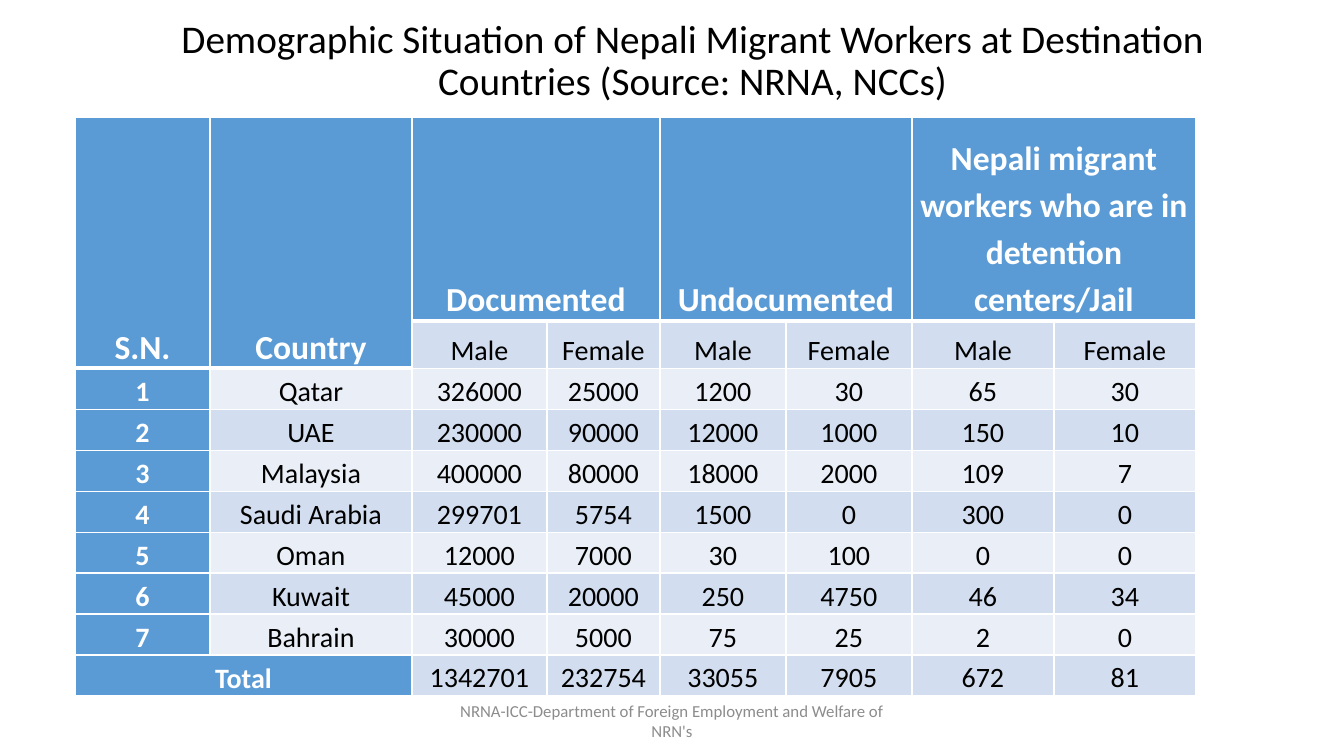
"""Build a slide with a table of Nepali migrant workers by destination country."""
import lxml.etree
import pptx
import pptx.dml.color
import pptx.enum.text
import pptx.oxml.ns
import pptx.util

TITLE = "Demographic Situation of Nepali Migrant Workers at Destination Countries (Source: NRNA, NCCs)"
FOOTER = "NRNA-ICC-Department of Foreign Employment and Welfare of NRN's"
KEYS = ["S.N.", "Country"]
GROUPS = ["Documented", "Undocumented", "Nepali migrant workers who are in detention centers/Jail"]
SEXES = ["Male", "Female"]
COUNTRIES = [
    ("Qatar", 326000, 25000, 1200, 30, 65, 30),
    ("UAE", 230000, 90000, 12000, 1000, 150, 10),
    ("Malaysia", 400000, 80000, 18000, 2000, 109, 7),
    ("Saudi Arabia", 299701, 5754, 1500, 0, 300, 0),
    ("Oman", 12000, 7000, 30, 100, 0, 0),
    ("Kuwait", 45000, 20000, 250, 4750, 46, 34),
    ("Bahrain", 30000, 5000, 75, 25, 2, 0),
]
TOTALS = (1342701, 232754, 33055, 7905, 672, 81)

SLIDE = (1344, 756)
TITLE_BOX = (113, -11, 1159, 146)
FOOTER_BOX = (445, 701, 454, 40)
TABLE_AT = (75, 117)
COLUMNS = [135, 202, 135, 113, 126, 126, 142, 142]
ROWS = [204, 46] + [41] * (len(COUNTRIES) + 1)
CELL_INSET = 7

FONT = "Calibri"
BLACK, WHITE, GRAY = "000000", "FFFFFF", "8C8C8C"
BLUE, BANDS = "5B9BD5", ("EAEFF7", "D2DEEF")
MIDDLE = pptx.enum.text.MSO_ANCHOR.MIDDLE
BOTTOM = pptx.enum.text.MSO_ANCHOR.BOTTOM


def px(length):
    return pptx.util.Emu(round(length * 914400 / 100.8))


def color(value):
    return pptx.dml.color.RGBColor.from_string(value)


def write(frame, text, size, ink, spacing=1.0, bold=False):
    paragraph = frame.paragraphs[0]
    paragraph.alignment = pptx.enum.text.PP_ALIGN.CENTER
    paragraph.line_spacing = spacing
    run = paragraph.add_run()
    run.text = str(text)
    run.font.name = FONT
    run.font.size = pptx.util.Pt(size)
    run.font.bold = bold
    run.font.color.rgb = color(ink)


def border(cell, side, points):
    properties = cell._tc.get_or_add_tcPr()
    qn = pptx.oxml.ns.qn
    line = lxml.etree.SubElement(properties, qn(f"a:ln{side}"), w=str(pptx.util.Pt(points)))
    fill = lxml.etree.SubElement(line, qn("a:solidFill"))
    lxml.etree.SubElement(fill, qn("a:srgbClr"), val=WHITE)


def add_title(slide):
    title = slide.shapes.title
    title.left, title.top, title.width, title.height = map(px, TITLE_BOX)
    title.text_frame.auto_size = pptx.enum.text.MSO_AUTO_SIZE.NONE
    title.text_frame.vertical_anchor = MIDDLE
    write(title.text_frame, TITLE, 28, BLACK, 0.9)


def add_workers(slide):
    group_row = KEYS + [name for group in GROUPS for name in (group, None)]
    sex_row = [None, None] + SEXES * len(GROUPS)
    body = [(number, *country) for number, country in enumerate(COUNTRIES, 1)]
    grid = [group_row, sex_row, *body, ("Total", None, *TOTALS)]
    last = len(grid) - 1

    frame = slide.shapes.add_table(len(ROWS), len(COLUMNS), *map(px, (*TABLE_AT, sum(COLUMNS), sum(ROWS))))
    table = frame.table
    for column, width in zip(table.columns, COLUMNS):
        column.width = px(width)
    for row, height in zip(table.rows, ROWS):
        row.height = px(height)

    for r, values in enumerate(grid):
        for c, value in enumerate(values):
            cell = table.cell(r, c)
            header_end = 2 if c < len(KEYS) else 1
            border(cell, "L", 1)
            border(cell, "R", 1)
            border(cell, "T", 3 if r == header_end else 1)
            border(cell, "B", 3 if r < header_end else 1)
            heading = r == 0 or c == 0 or value is None
            cell.fill.solid()
            cell.fill.fore_color.rgb = color(BLUE if heading else BANDS[r % 2])
            cell.margin_left = cell.margin_right = px(CELL_INSET)
            cell.margin_top = cell.margin_bottom = 0
            cell.vertical_anchor = MIDDLE if r == last and not heading else BOTTOM
            if value is not None:
                write(cell.text_frame, value, 24 if r == 0 else 20, WHITE if heading else BLACK, 1.15, heading)

    for c in range(len(KEYS)):
        table.cell(0, c).merge(table.cell(1, c))
    for c in range(len(KEYS), len(COLUMNS), len(SEXES)):
        table.cell(0, c).merge(table.cell(0, c + 1))
    table.cell(last, 0).merge(table.cell(last, 1))


def add_footer(slide):
    frame = slide.shapes.add_textbox(*map(px, FOOTER_BOX)).text_frame
    frame.word_wrap = True
    frame.vertical_anchor = MIDDLE
    write(frame, FOOTER, 12, GRAY)


def main():
    deck = pptx.Presentation()
    deck.slide_width, deck.slide_height = map(px, SLIDE)
    slide = deck.slides.add_slide(deck.slide_layouts[5])
    add_title(slide)
    add_workers(slide)
    add_footer(slide)
    deck.save("out.pptx")


if __name__ == "__main__":
    main()
